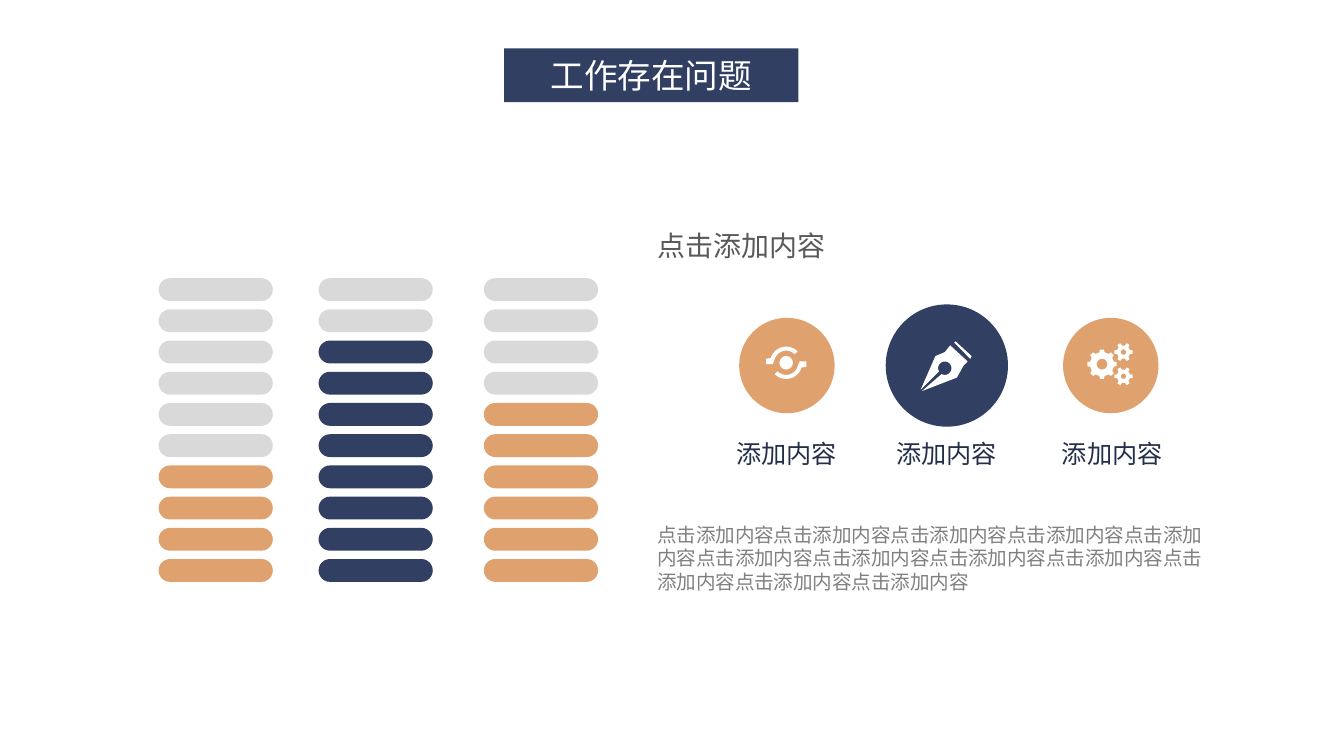
from math import cos, pi, radians, sin

from lxml.etree import SubElement
from pptx import Presentation
from pptx.dml.color import RGBColor
from pptx.enum.shapes import MSO_SHAPE
from pptx.enum.text import MSO_ANCHOR, PP_ALIGN
from pptx.oxml.ns import qn
from pptx.util import Inches, Pt

THEME = {
    "navy": "303F62", "orange": "DFA26F", "empty": "D9D9D9", "white": "FFFFFF",
    "heading": "595959", "label": "242F4A", "body": "808080",
    "title_font": "Arial", "text_font": "Noto Sans CJK SC",
    "title_size": 18, "heading_size": 15, "label_size": 13.5, "body_size": 10.5,
    "line_height": 1.2,
}

# Content
TITLE = "工作存在问题"
HEADING = "点击添加内容"
BODY = "点击添加内容" * 12
COLUMNS = [  # left, filled bars out of ten, colour
    (1.18, 4, "orange"),
    (2.37, 8, "navy"),
    (3.6, 6, "orange"),
]
TOPICS = [  # label, circle left, label left, circle diameter, colour
    ("添加内容", 5.5, 5.4, 0.71, "orange"),
    ("添加内容", 6.59, 6.59, 0.91, "navy"),
    ("添加内容", 7.91, 7.82, 0.71, "orange"),
]

# Layout
SLIDE_WIDTH = Inches(10)
SLIDE_HEIGHT = SLIDE_WIDTH * 9 // 16
BAR_COUNT, BAR_TOP, BAR_LAST_TOP = 10, 2.07, 4.16
BAR_WIDTH, BAR_HEIGHT = 0.85, 0.17
CIRCLE_MIDDLE = 2.72
LABEL_TOP, LABEL_WIDTH, LABEL_HEIGHT = 3.22, 0.91, 0.3
TEXT_LEFT = 4.82


def paint(shape, color):
    shape.shadow.inherit = False
    shape.fill.solid()
    shape.fill.fore_color.rgb = RGBColor.from_string(THEME[color])
    shape.line.fill.background()


def add_block(slide, preset, left, top, width, height, color):
    shape = slide.shapes.add_shape(
        preset, Inches(left), Inches(top), Inches(width), Inches(height))
    paint(shape, color)
    return shape


def format_text(paragraph, font_name, size, color):
    for run in paragraph.runs:
        run.font.name = font_name
        run.font.size = Pt(size)
        run.font.color.rgb = RGBColor.from_string(color)


def add_text(slide, text, left, top, width, height, role, centred=False):
    box = slide.shapes.add_textbox(
        Inches(left), Inches(top), Inches(width), Inches(height))
    frame = box.text_frame
    frame.word_wrap = not centred
    frame.margin_left = frame.margin_right = Inches(0.07)
    frame.margin_top = frame.margin_bottom = Inches(0.04)
    frame.text = text
    paragraph = frame.paragraphs[0]
    paragraph.alignment = PP_ALIGN.CENTER if centred else PP_ALIGN.LEFT
    size = THEME[role + "_size"]
    paragraph.line_spacing = Pt(size * THEME["line_height"])
    format_text(paragraph, THEME["text_font"], size, THEME[role])
    for run in paragraph.runs:
        east_asian = SubElement(run.font._element, qn("a:ea"))
        east_asian.set("typeface", THEME["text_font"])


def add_outline(slide, contours):
    """Draw closed contours as one white shape; inner contours become holes."""
    contours = [[(Inches(x), Inches(y)) for x, y in points] for points in contours]
    builder = slide.shapes.build_freeform(*contours[0][0])
    for index, points in enumerate(contours):
        if index:
            builder.move_to(*points[0])
        builder.add_line_segments(points[1:], close=True)
    paint(builder.convert_to_shape(), "white")


def arc(x, y, radius, start, end, steps=24):
    angles = [radians(start + (end - start) * i / steps) for i in range(steps + 1)]
    return [(x + radius * cos(a), y + radius * sin(a)) for a in angles]


def gear(x, y, root, tip, hole, teeth):
    points = []
    for tooth in range(teeth):
        for offset, radius in ((-0.28, root), (-0.17, tip), (0.17, tip), (0.28, root)):
            angle = 2 * pi * (tooth + offset) / teeth
            points.append((x + radius * cos(angle), y + radius * sin(angle)))
    return [points, arc(x, y, hole, 0, 360)]


def add_eye_icon(slide):
    x, y = 5.85, 2.7
    upper = ([(-0.15, 0.01), (-0.15, -0.03)]
             + arc(0, 0, 0.12, 197, 315) + arc(0, 0, 0.09, 315, 190)
             + [(-0.1, 0.01)])
    swirls = [[(x + turn * dx, y + turn * dy) for dx, dy in upper] for turn in (1, -1)]
    add_outline(slide, swirls + [arc(x, y, 0.05, 0, 360)])


def add_pen_icon(slide):
    nib = [(6.85, 2.9), (6.96, 2.65), (7.03, 2.62), (7.07, 2.57), (7.2, 2.69),
           (7.17, 2.72), (7.12, 2.81), (6.86, 2.91)]
    add_outline(slide, [nib + arc(7.03, 2.74, 0.05, 119, -209)])
    add_outline(slide, [[(7.11, 2.54), (7.23, 2.65), (7.22, 2.67), (7.1, 2.55)]])


def add_gears_icon(slide):
    contours = gear(8.2, 2.71, 0.09, 0.11, 0.04, 8)
    for y in (2.62, 2.8):
        contours += gear(8.36, y, 0.05, 0.07, 0.02, 6)
    add_outline(slide, contours)


def main():
    presentation = Presentation()
    presentation.slide_width = SLIDE_WIDTH
    presentation.slide_height = SLIDE_HEIGHT
    slide = presentation.slides.add_slide(presentation.slide_layouts[6])

    # Title banner
    banner = add_block(slide, MSO_SHAPE.RECTANGLE, 3.75, 0.36, 2.19, 0.4, "navy")
    banner.text_frame.text = TITLE
    banner.text_frame.vertical_anchor = MSO_ANCHOR.MIDDLE
    paragraph = banner.text_frame.paragraphs[0]
    paragraph.alignment = PP_ALIGN.CENTER
    format_text(paragraph, THEME["title_font"], THEME["title_size"], THEME["white"])

    # Stacked bars, filled from the bottom
    step = (BAR_LAST_TOP - BAR_TOP) / (BAR_COUNT - 1)
    for left, filled, color in COLUMNS:
        for row in range(BAR_COUNT):
            bar_color = color if row >= BAR_COUNT - filled else "empty"
            bar = add_block(slide, MSO_SHAPE.ROUNDED_RECTANGLE, left,
                            BAR_TOP + row * step, BAR_WIDTH, BAR_HEIGHT, bar_color)
            bar.adjustments[0] = 0.5

    # Heading and body text
    add_text(slide, HEADING, TEXT_LEFT, 1.66, 4.09, 0.33, "heading")
    add_text(slide, BODY, TEXT_LEFT, 3.85, 4.24, 0.61, "body")

    # Topic circles with labels
    for label, circle_left, label_left, diameter, color in TOPICS:
        add_block(slide, MSO_SHAPE.OVAL, circle_left, CIRCLE_MIDDLE - diameter / 2,
                  diameter, diameter, color)
        add_text(slide, label, label_left, LABEL_TOP, LABEL_WIDTH, LABEL_HEIGHT,
                 "label", centred=True)

    # Icons
    add_eye_icon(slide)
    add_pen_icon(slide)
    add_gears_icon(slide)

    presentation.save("out.pptx")


if __name__ == "__main__":
    main()
